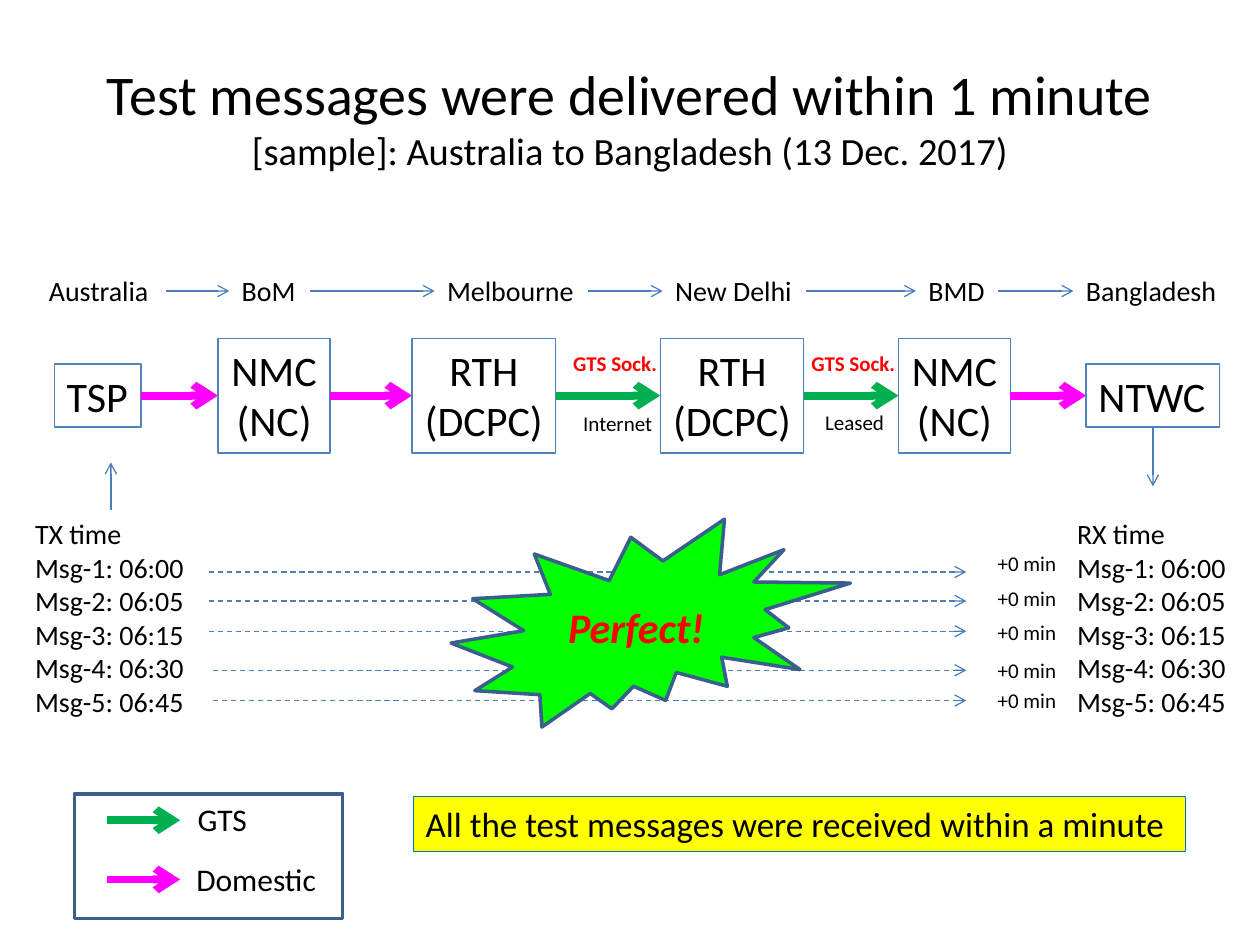
from lxml import etree
from pptx import Presentation, util as u
from pptx.dml.color import RGBColor
from pptx.enum import dml, shapes, text
from pptx.oxml.ns import qn

BLACK = RGBColor(0, 0, 0)
RED = RGBColor(0xFF, 0, 0)
YELLOW = RGBColor(0xFF, 0xFF, 0)
LIME = RGBColor(0, 0xFF, 0)
GREEN = RGBColor(0, 0xB0, 0x50)
MAGENTA = RGBColor(0xFF, 0, 0xFF)
BLUE = RGBColor(0x4F, 0x81, 0xBD)
ARROW_BLUE = RGBColor(0x4B, 0x7E, 0xBC)
DARK_BLUE = RGBColor(0x3A, 0x5F, 0x8C)
BRIGHT_BLUE = RGBColor(0, 0x70, 0xC0)

TITLE = "Test messages were delivered within 1 minute"
SUBTITLE = "[sample]: Australia to Bangladesh (13 Dec. 2017)"
CONCLUSION = "All the test messages were received within a minute"

# node lines, left, width, colour of the arrow to the next node
NODES = [
    (["TSP"], 0.43, 0.69, MAGENTA),
    (["NMC", "(NC)"], 1.73, 0.89, MAGENTA),
    (["RTH", "(DCPC)"], 3.27, 1.14, GREEN),
    (["RTH", "(DCPC)"], 5.24, 1.14, GREEN),
    (["NMC", "(NC)"], 7.13, 0.89, MAGENTA),
    (["NTWC"], 8.62, 1.06, None),
]
PLACES = [  # name, left, width
    ("Australia", 0.29, 1.03), ("BoM", 1.82, 0.64), ("Melbourne", 3.45, 1.22),
    ("New Delhi", 5.26, 1.14), ("BMD", 7.27, 0.65), ("Bangladesh", 8.52, 1.27),
]
LINK_LABELS = [  # text, left, top, width, colour, bold
    ("GTS Sock.", 4.45, 2.73, 0.88, RED, True),
    ("Internet", 4.53, 3.21, 0.75, BLACK, False),
    ("GTS Sock.", 6.34, 2.73, 0.88, RED, True),
    ("Leased", 6.45, 3.2, 0.68, BLACK, False),
]
MESSAGES = [  # time, arrow start, arrow height, top of delay label
    ("06:00", 1.66, 4.54, 4.32), ("06:05", 1.66, 4.77, 4.6),
    ("06:15", 1.66, 5.01, 4.87), ("06:30", 1.69, 5.32, 5.17),
    ("06:45", 1.69, 5.56, 5.41),
]
DELAY = "+0 min"
TIME_LISTS = [("TX time", 0.18), ("RX time", 8.45)]
LEGEND = [  # text, left, top, width, arrow height, colour
    ("GTS", 1.47, 6.3, 0.6, 6.51, GREEN),
    ("Domestic", 1.46, 6.78, 1.16, 6.98, MAGENTA),
]
NODE_AXIS, PLACE_TOP, PLACE_AXIS = 3.14, 2.12, 2.31
NODE_HEIGHTS = {1: 0.5, 2: 0.91}

presentation = Presentation()
presentation.slide_width, presentation.slide_height = u.Inches(10), u.Inches(7.5)
slide = presentation.slides.add_slide(presentation.slide_layouts[6])


def inches(*lengths):
    return [u.Inches(length) for length in lengths]


def write(shape, lines, size, color=BLACK, bold=False, italic=False, centred=False):
    frame = shape.text_frame
    frame.text = "\n".join(lines)
    for paragraph in frame.paragraphs:
        paragraph.alignment = text.PP_ALIGN.CENTER if centred else text.PP_ALIGN.LEFT
        font = paragraph.font
        font.name, font.size, font.color.rgb = "Calibri", u.Pt(size), color
        font.bold, font.italic = bold, italic
    return frame


def fit(frame):
    """Let the shape follow its text, without wrapping."""
    frame.word_wrap = False
    frame.vertical_anchor = text.MSO_ANCHOR.TOP
    frame.auto_size = text.MSO_AUTO_SIZE.SHAPE_TO_FIT_TEXT


def label(lines, box, size, **style):
    fit(write(slide.shapes.add_textbox(*inches(*box)), lines, size, **style))


def outlined(kind, box, line, width, fill=None):
    shape = slide.shapes.add_shape(kind, *inches(*box))
    shape.shadow.inherit = False
    shape.line.color.rgb, shape.line.width = line, u.Pt(width)
    if fill is None:
        shape.fill.background()
    else:
        shape.fill.solid()
        shape.fill.fore_color.rgb = fill
    return shape


def arrow(start, end, color=ARROW_BLUE, width=0.75, dashed=False):
    connector = slide.shapes.add_connector(
        shapes.MSO_CONNECTOR.STRAIGHT, *inches(*start, *end))
    connector.line.color.rgb, connector.line.width = color, u.Pt(width)
    if dashed:
        connector.line.dash_style = dml.MSO_LINE.DASH
    etree.SubElement(connector.line._get_or_add_ln(), qn("a:tailEnd"), type="arrow")
    etree.SubElement(connector._element.spPr, qn("a:effectLst"))


RECTANGLE = shapes.MSO_SHAPE.RECTANGLE

# Title
title = slide.shapes.add_textbox(*inches(0.5, 0.3, 9, 1.25))
frame = write(title, [TITLE], 32, centred=True)
frame.word_wrap = True
frame.vertical_anchor = text.MSO_ANCHOR.MIDDLE
frame.paragraphs[0].add_line_break()
subtitle = frame.paragraphs[0].add_run()
subtitle.text, subtitle.font.size = SUBTITLE, u.Pt(22)

# Chain of nodes, with the places above
for index, (lines, left, width, color) in enumerate(NODES):
    height = NODE_HEIGHTS[len(lines)]
    node = outlined(RECTANGLE, (left, NODE_AXIS - height / 2, width, height), BLUE, 0.75)
    fit(write(node, lines, 24, centred=len(lines) > 1))
    if color is not None:
        arrow((left + width, NODE_AXIS), (NODES[index + 1][1], NODE_AXIS), color, 4.5)

for name, left, width in PLACES:
    label([name], (left, PLACE_TOP, width, 0.37), 16)
for (_, left, width), (_, next_left, _) in zip(PLACES, PLACES[1:]):
    arrow((left + width, PLACE_AXIS), (next_left, PLACE_AXIS))

for words, left, top, width, color, bold in LINK_LABELS:
    label([words], (left, top, width, 0.3), 12, color=color, bold=bold)

# Sending and receiving times
times = [f"Msg-{number}: {message[0]}" for number, message in enumerate(MESSAGES, 1)]
for heading, left in TIME_LISTS:
    label([heading] + times, (left, 4.05, 1.39, 1.72), 16)
arrow((0.88, 4.05), (0.88, 3.67))
arrow((9.15, 3.39), (9.15, 3.86))
for _, start, height, label_top in MESSAGES:
    arrow((start, height), (7.67, height), dashed=True)
    label([DELAY], (7.82, label_top, 0.67, 0.3), 12)

burst = outlined(shapes.MSO_SHAPE.EXPLOSION2, (3.58, 4.12, 3.17, 1.65), DARK_BLUE, 2, LIME)
frame = write(burst, ["Perfect!"], 24, RED, bold=True, italic=True, centred=True)
frame.vertical_anchor = text.MSO_ANCHOR.MIDDLE

# Legend and conclusion
outlined(RECTANGLE, (0.59, 6.3, 2.13, 0.99), DARK_BLUE, 2)
for words, left, top, width, height, color in LEGEND:
    arrow((0.85, height), (1.43, height), color, 4.5)
    label([words], (left, top, width, 0.4), 18)

conclusion = outlined(RECTANGLE, (3.28, 6.32, 6.13, 0.44), BRIGHT_BLUE, 0.75, YELLOW)
fit(write(conclusion, [CONCLUSION], 20))

presentation.save("out.pptx")
